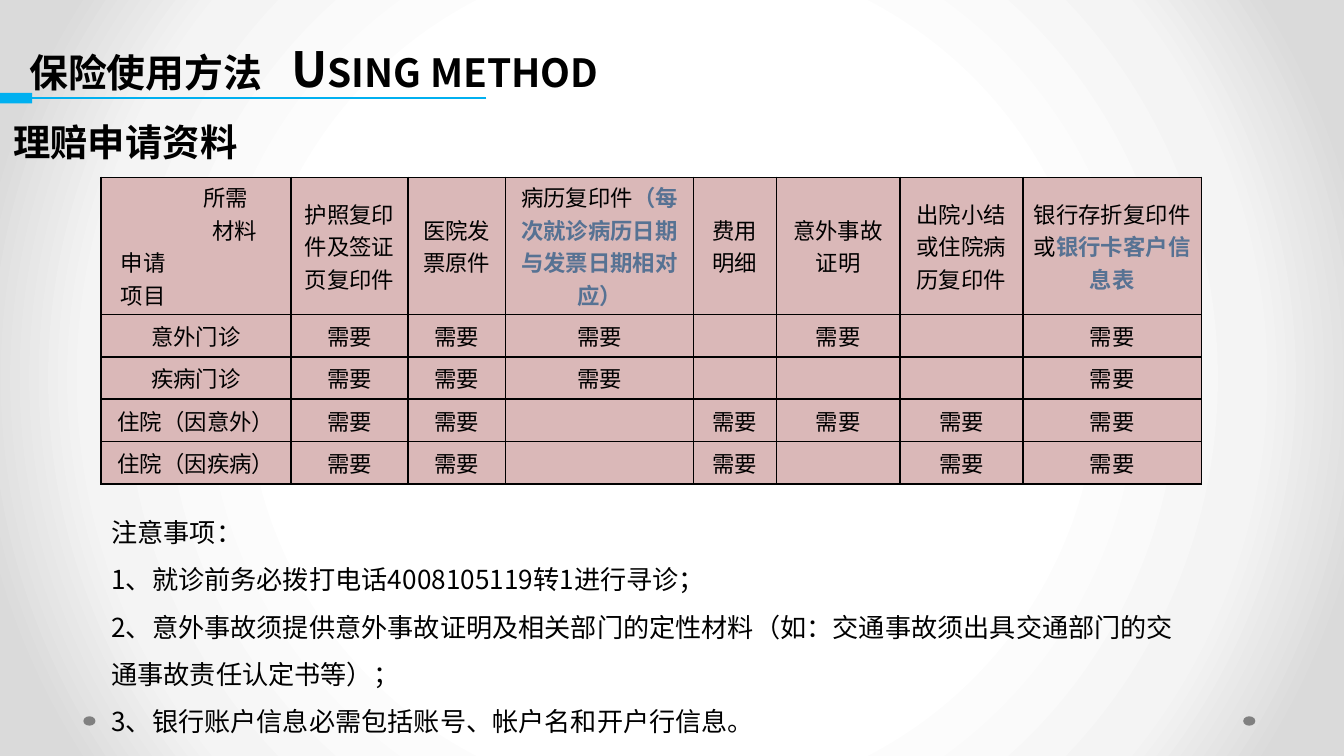
from lxml import etree
from pptx import Presentation
from pptx.dml.color import RGBColor
from pptx.enum import shapes, text
from pptx.oxml import parse_xml
from pptx.oxml.ns import nsdecls, qn
from pptx.util import Inches, Pt

FONT = "Noto Sans CJK SC"
BLACK, BLUE, STEEL, PINK, GRAY = "000000", "00B0F0", "577293", "DAB8B8", "808080"
CENTER, LEFT = text.PP_ALIGN.CENTER, text.PP_ALIGN.LEFT

TABLE_WIDTH, TABLE_HEIGHT, HEADER_HEIGHT = 8.19, 2.28, 1.02
COLUMN_SHARES = [1.42, 0.87, 0.73, 1.4, 0.62, 0.92, 0.92, 1.33]
# Each header is plain text followed by an emphasised part.
HEADERS = [
    ("护照复印件及签证页复印件", ""),
    ("医院发票原件", ""),
    ("病历复印件", "（每次就诊病历日期与发票日期相对应）"),
    ("费用明细", ""),
    ("意外事故证明", ""),
    ("出院小结或住院病历复印件", ""),
    ("银行存折复印件或", "银行卡客户信息表"),
]
# Corner cell lines: text, alignment, left margin.
CORNER = [("所需", CENTER, 0.44), ("材料", CENTER, 0.58),
          ("申请", LEFT, 0.08), ("项目", LEFT, 0.08)]
# One digit per material: 1 where it is needed.
CLAIMS = {"意外门诊": "1110101", "疾病门诊": "1110001",
          "住院（因意外）": "1101111", "住院（因疾病）": "1101011"}
NOTES = [
    "注意事项：",
    "1、就诊前务必拨打电话4008105119转1进行寻诊；",
    "2、意外事故须提供意外事故证明及相关部门的定性材料（如：交通事故须出具交通部门的交通事故责任认定书等）；",
    "3、银行账户信息必需包括账号、帐户名和开户行信息。",
]


def color(value):
    return RGBColor.from_string(value)


def set_background(page):
    stops = "".join(
        f'<a:gs pos="{place * 1000}"><a:srgbClr val="{shade}"/></a:gs>'
        for place, shade in [(50, "FFFFFF"), (76, "F4F4F4"), (92, "DADADA")])
    page.element.cSld.insert(0, parse_xml(
        f'<p:bg {nsdecls("p", "a")}><p:bgPr><a:gradFill rotWithShape="1">'
        f'<a:gsLst>{stops}</a:gsLst><a:path path="circle">'
        '<a:fillToRect l="50000" t="50000" r="50000" b="50000"/></a:path>'
        '</a:gradFill><a:effectLst/></p:bgPr></p:bg>'))


def add_span(para, words, size, shade=BLACK, bold=False):
    span = para.add_run()
    span.text = words
    for name, value in {"size": Pt(size), "bold": bold, "name": FONT}.items():
        setattr(span.font, name, value)
    span.font.color.rgb = color(shade)
    etree.SubElement(span.font._element, qn("a:ea"), typeface=FONT)


def add_text(page, place, lines, size, bold=False, spacing=None,
             anchor=text.MSO_ANCHOR.TOP):
    frame = page.shapes.add_textbox(*map(Inches, place)).text_frame
    frame.word_wrap = True
    frame.vertical_anchor = anchor
    for number, line in enumerate(lines):
        para = frame.add_paragraph() if number else frame.paragraphs[0]
        para.line_spacing = spacing
        add_span(para, line, size, bold=bold)
    return frame


def add_title(page):
    frame = add_text(page, (0.12, 0.3, 6.54, 0.47), ["保险使用方法\tUsing method"],
                     26, True, Pt(58), text.MSO_ANCHOR.BOTTOM)
    para = frame.paragraphs[0]
    tabs = etree.SubElement(para._p.get_or_add_pPr(), qn("a:tabLst"))
    etree.SubElement(tabs, qn("a:tab"), pos=str(Inches(1.95)), algn="l")
    para.runs[0].font._element.set("cap", "small")


def add_filled(page, kind, place, shade):
    shape = page.shapes.add_shape(kind, *map(Inches, place))
    shape.shadow.inherit = False
    shape.fill.solid()
    shape.fill.fore_color.rgb = color(shade)
    shape.line.fill.background()


def add_rule(page, start, end, shade):
    line = page.shapes.add_connector(
        shapes.MSO_CONNECTOR.STRAIGHT, *map(Inches, start + end))
    line.line.color.rgb = color(shade)
    line.line.width = Pt(0.75)
    etree.SubElement(line._element.spPr, qn("a:effectLst"))


def format_cell(cell):
    for side in ("lnL", "lnR", "lnT", "lnB"):
        cell._tc.get_or_add_tcPr().append(parse_xml(
            f'<a:{side} {nsdecls("a")} w="{Pt(1)}"><a:solidFill>'
            f'<a:srgbClr val="{BLACK}"/></a:solidFill></a:{side}>'))
    cell.fill.solid()
    cell.fill.fore_color.rgb = color(PINK)
    layout = {"margin_left": Inches(0.07), "margin_right": Inches(0.07),
              "margin_top": 0, "margin_bottom": 0,
              "vertical_anchor": text.MSO_ANCHOR.MIDDLE}
    for name, value in layout.items():
        setattr(cell, name, value)


def fill_cell(cell, plain, strong=""):
    para = cell.text_frame.paragraphs[0]
    para.alignment = CENTER
    if plain:
        add_span(para, plain, 12)
    else:
        etree.SubElement(para._p, qn("a:endParaRPr"), sz="1200")
    if strong:
        add_span(para, strong, 12, STEEL, True)


def fill_corner(cell):
    frame = cell.text_frame
    for number, (words, alignment, margin) in enumerate(CORNER):
        para = frame.add_paragraph() if number else frame.paragraphs[0]
        para.alignment = alignment
        para._p.get_or_add_pPr().set("marL", str(Inches(margin)))
        add_span(para, words, 12)


def add_materials_table(page):
    place = map(Inches, (0.75, 1.32, TABLE_WIDTH, TABLE_HEIGHT))
    row_count = len(CLAIMS) + 1
    table = page.shapes.add_table(row_count, len(COLUMN_SHARES), *place).table
    table.first_row = table.horz_banding = False
    for column, share in zip(table.columns, COLUMN_SHARES):
        column.width = Inches(TABLE_WIDTH * share / sum(COLUMN_SHARES))
    for row in table.rows:
        row.height = Inches((TABLE_HEIGHT - HEADER_HEIGHT) / len(CLAIMS))
    table.rows[0].height = Inches(HEADER_HEIGHT)
    for cell in table.iter_cells():
        format_cell(cell)
    fill_corner(table.cell(0, 0))
    for column, header in enumerate(HEADERS, 1):
        fill_cell(table.cell(0, column), *header)
    for row, (claim, needs) in enumerate(CLAIMS.items(), 1):
        fill_cell(table.cell(row, 0), claim)
        for column, need in enumerate(needs, 1):
            fill_cell(table.cell(row, column), "需要" if need == "1" else "")


def main():
    deck = Presentation()
    deck.slide_width = Inches(10)
    deck.slide_height = deck.slide_width * 9 // 16
    page = deck.slides.add_slide(deck.slide_layouts[6])
    set_background(page)
    for left in (9.25, 0.62):
        add_filled(page, shapes.MSO_SHAPE.OVAL, (left, 5.33, 0.09, 0.07), GRAY)
    add_title(page)
    add_text(page, (0, 0.84, 2.33, 0.54), ["理赔申请资料"], 20, bold=True)
    add_materials_table(page)
    add_text(page, (0.73, 3.68, 8.25, 1.83), NOTES, 14, spacing=1.5)
    add_rule(page, (3.62, 0.73), (0.23, 0.73), BLUE)
    add_filled(page, shapes.MSO_SHAPE.RECTANGLE, (0, 0.69, 0.24, 0.08), BLUE)
    deck.save("out.pptx")


if __name__ == "__main__":
    main()
